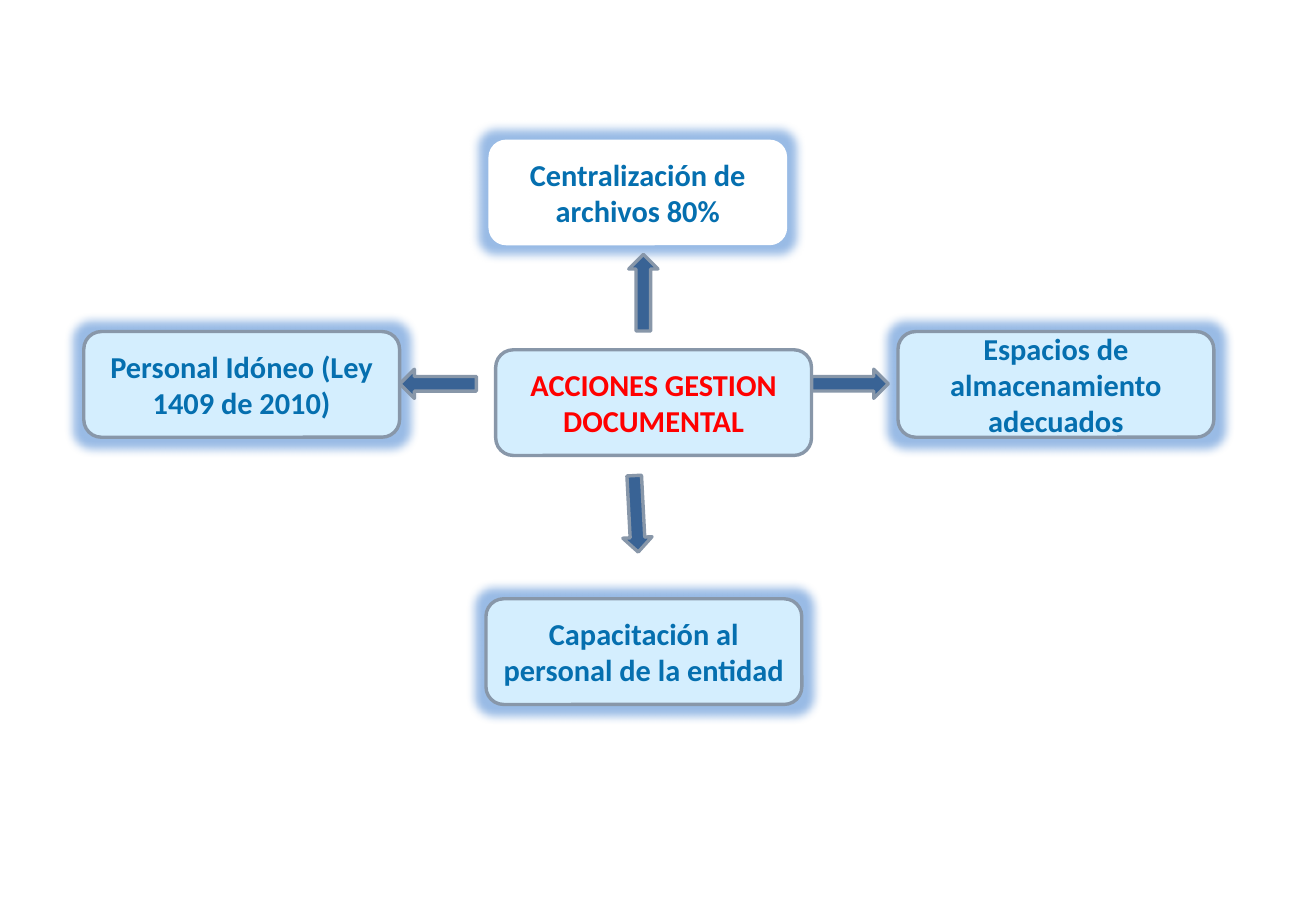
from lxml.etree import SubElement
from pptx import Presentation
from pptx.dml.color import RGBColor
from pptx.enum.shapes import MSO_SHAPE
from pptx.enum.text import MSO_ANCHOR, PP_ALIGN
from pptx.oxml.ns import qn
from pptx.util import Inches, Pt

THEME = {
    "font": "Calibri",
    "size": Pt(18),
    "outline": Pt(2),
    "glow radius": Pt(11),
    "box": "D4EEFE",
    "highlight": "FFFFFF",
    "border": "8897A9",
    "arrow": "396395",
    "title": "FF0000",
    "action": "056FAF",
    "glow": "558ED5",
}

presentation = Presentation()
presentation.slide_width = Inches(10.83)
presentation.slide_height = Inches(7.5)
slide = presentation.slides.add_slide(presentation.slide_layouts[6])


def add_block(kind, left, top, width, height, fill):
    """Add a bordered shape; lengths are percentages of the slide's size."""
    across = presentation.slide_width / 100
    down = presentation.slide_height / 100
    shape = slide.shapes.add_shape(
        kind, round(left * across), round(top * down),
        round(width * across), round(height * down))
    shape.shadow.inherit = False
    shape.fill.solid()
    shape.fill.fore_color.rgb = RGBColor.from_string(THEME[fill])
    shape.line.color.rgb = RGBColor.from_string(THEME["border"])
    shape.line.width = THEME["outline"]
    return shape


def add_glow(shape):
    effects = shape._element.spPr.find(qn("a:effectLst"))
    glow = SubElement(effects, qn("a:glow"), rad=str(THEME["glow radius"]))
    color = SubElement(glow, qn("a:srgbClr"), val=THEME["glow"])
    SubElement(color, qn("a:alpha"), val="60000")


BOX_WIDTH, BOX_HEIGHT = 24, 11.6
SIDE_TOP = 36.4
boxes = [
    ("ACCIONES GESTION DOCUMENTAL", 37.67, 38.4, BOX_WIDTH, "box", "title"),
    ("Personal Idóneo (Ley 1409 de 2010)", 6.37, SIDE_TOP, BOX_WIDTH, "box", "action"),
    ("Capacitación al personal de la entidad", 36.93, 65.73, BOX_WIDTH, "box", "action"),
    ("Espacios de almacenamiento adecuados", 68.24, SIDE_TOP, BOX_WIDTH, "box", "action"),
    ("Centralización de archivos 80%", 37.12, 15.33, 22.7, "highlight", "action"),
]
for text, left, top, width, fill, text_color in boxes:
    box = add_block(MSO_SHAPE.ROUNDED_RECTANGLE, left, top, width, BOX_HEIGHT, fill)
    if text_color == "action":
        add_glow(box)
    if fill == "highlight":
        box.line.fill.background()
    frame = box.text_frame
    frame.word_wrap = True
    frame.vertical_anchor = MSO_ANCHOR.MIDDLE
    paragraph = frame.paragraphs[0]
    paragraph.text = text
    paragraph.alignment = PP_ALIGN.CENTER
    paragraph.font.name = THEME["font"]
    paragraph.font.size = THEME["size"]
    paragraph.font.bold = True
    paragraph.font.color.rgb = RGBColor.from_string(THEME[text_color])

ARROW_LENGTH, ARROW_THICKNESS = 5.82, 3.2
arrows = [(61.68, 40.53, 0), (30.38, 40.53, 180), (45.43, 54.8, 87), (45.98, 30.53, 270)]
for left, top, rotation in arrows:
    arrow = add_block(MSO_SHAPE.RIGHT_ARROW, left, top, ARROW_LENGTH, ARROW_THICKNESS, "arrow")
    arrow.rotation = rotation

presentation.save("out.pptx")
